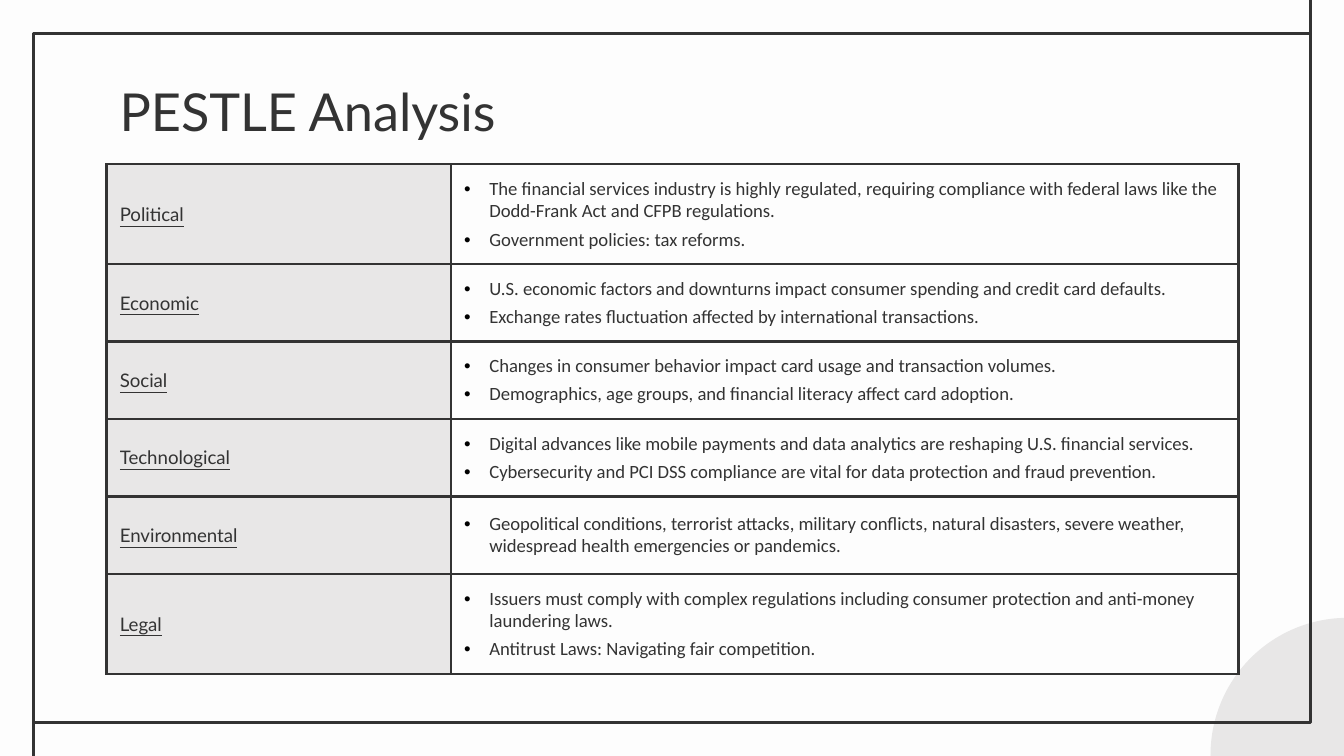
from dataclasses import dataclass

from lxml import etree
from pptx import Presentation
from pptx import util as u
from pptx.dml.color import RGBColor
from pptx.enum import shapes, text
from pptx.oxml import ns

Pt = u.Pt


@dataclass(frozen=True)
class Theme:
    paper: str = "FDFDFD"
    ink: str = "333333"
    grey: str = "E8E7E7"
    dot: str = "000000"
    head: str = "Lato"
    body: str = "Calibri"
    big: float = 28
    small: float = 10
    rule: float = 1.5
    pad: float = 7.2


THEME = Theme()
WIDE, HIGH = 720, 405
EDGE = 18
BLEED = 3.6
LEFT, TOP = 57, 88
COLS = (184.5, 422)
ROW = 41.5
HANG = 13.5

TOPICS = [
    ("Political", [
        "The financial services industry is highly regulated, requiring compliance "
        "with federal laws like the Dodd-Frank Act and CFPB regulations.",
        "Government policies: tax reforms.",
    ]),
    ("Economic", [
        "U.S. economic factors and downturns impact consumer spending and credit card defaults.",
        "Exchange rates fluctuation affected by international transactions.",
    ]),
    ("Social", [
        "Changes in consumer behavior impact card usage and transaction volumes.",
        "Demographics, age groups, and financial literacy affect card adoption.",
    ]),
    ("Technological", [
        "Digital advances like mobile payments and data analytics are reshaping "
        "U.S. financial services.",
        "Cybersecurity and PCI DSS compliance are vital for data protection and fraud prevention.",
    ]),
    ("Environmental", [
        "Geopolitical conditions, terrorist attacks, military conflicts, natural disasters, "
        "severe weather, widespread health emergencies or pandemics.",
    ]),
    ("Legal", [
        "Issuers must comply with complex regulations including consumer protection "
        "and anti-money laundering laws.",
        "Antitrust Laws: Navigating fair competition.",
    ]),
]


def rgb(code):
    return RGBColor.from_string(code)


def sub(node, tag, **attrs):
    return etree.SubElement(node, ns.qn(tag), **attrs)


def style(para, face, size):
    para.font.name = face
    para.font.size = Pt(size)
    para.font.color.rgb = rgb(THEME.ink)


def stroke(line):
    line.color.rgb = rgb(THEME.ink)
    line.width = Pt(THEME.rule)


def add_disc(slide, left, top, size):
    disc = slide.shapes.add_shape(
        shapes.MSO_SHAPE.OVAL, Pt(left), Pt(top), Pt(size), Pt(size))
    disc.shadow.inherit = False
    disc.fill.solid()
    disc.fill.fore_color.rgb = rgb(THEME.grey)
    disc.line.fill.background()


def add_frame(slide):
    frame = slide.shapes.add_shape(
        shapes.MSO_SHAPE.RECTANGLE, Pt(EDGE), Pt(EDGE),
        Pt(WIDE - 2 * EDGE), Pt(HIGH - 2 * EDGE))
    frame.shadow.inherit = False
    frame.fill.background()
    stroke(frame.line)


def add_rule(slide, x, start, end):
    rule = slide.shapes.add_connector(
        shapes.MSO_CONNECTOR.STRAIGHT, Pt(x), Pt(start), Pt(x), Pt(end))
    stroke(rule.line)
    sub(rule._element.spPr, "a:effectLst")


def add_title(slide, words):
    box = slide.shapes.add_textbox(Pt(LEFT), Pt(35.5), Pt(sum(COLS)), Pt(45))
    frame = box.text_frame
    frame.word_wrap = True
    frame.margin_left = frame.margin_right = Pt(THEME.pad)
    frame.margin_top = frame.margin_bottom = Pt(THEME.pad)
    para = frame.paragraphs[0]
    para.text = words
    style(para, THEME.head, THEME.big)


def set_cell(cell):
    cell.margin_left = cell.margin_right = Pt(THEME.pad)
    cell.margin_top = cell.margin_bottom = Pt(THEME.pad)
    cell.vertical_anchor = text.MSO_ANCHOR.MIDDLE
    props = cell._tc.get_or_add_tcPr()
    for side in ("a:lnL", "a:lnR", "a:lnT", "a:lnB"):
        line = sub(props, side, w=str(Pt(THEME.rule)))
        sub(sub(line, "a:solidFill"), "a:srgbClr", val=THEME.ink)


def fill_label(cell, words):
    set_cell(cell)
    cell.fill.solid()
    cell.fill.fore_color.rgb = rgb(THEME.grey)
    para = cell.text_frame.paragraphs[0]
    para.text = words
    style(para, THEME.head, THEME.small)
    para.font.underline = True


def fill_points(cell, points):
    set_cell(cell)
    cell.fill.background()
    frame = cell.text_frame
    for i, words in enumerate(points):
        para = frame.add_paragraph() if i else frame.paragraphs[0]
        para.text = words
        props = para._p.get_or_add_pPr()
        props.set("marL", str(Pt(HANG)))
        props.set("indent", str(-Pt(HANG)))
        sub(sub(props, "a:buClr"), "a:srgbClr", val=THEME.dot)
        sub(props, "a:buFont", typeface="Arial")
        sub(props, "a:buChar", char="•")
        para.space_after = Pt(3)
        style(para, THEME.body, THEME.small)


def add_grid(slide, topics):
    grid = slide.shapes.add_table(
        len(topics), len(COLS), Pt(LEFT), Pt(TOP),
        Pt(sum(COLS)), Pt(ROW * len(topics))).table
    grid.first_row = grid.horz_banding = False
    for col, width in zip(grid.columns, COLS):
        col.width = Pt(width)
    for i, (label, points) in enumerate(topics):
        grid.rows[i].height = Pt(ROW)
        fill_label(grid.cell(i, 0), label)
        fill_points(grid.cell(i, 1), points)


def main():
    deck = Presentation()
    deck.slide_width, deck.slide_height = Pt(WIDE), Pt(HIGH)
    slide = deck.slides.add_slide(deck.slide_layouts[6])
    slide.background.fill.solid()
    slide.background.fill.fore_color.rgb = rgb(THEME.paper)
    add_disc(slide, 648.5, 331, 147)
    add_rule(slide, WIDE - EDGE, EDGE, -BLEED)
    add_rule(slide, EDGE, HIGH + BLEED, HIGH - EDGE)
    add_frame(slide)
    add_title(slide, "PESTLE Analysis")
    add_grid(slide, TOPICS)
    deck.save("out.pptx")


if __name__ == "__main__":
    main()
